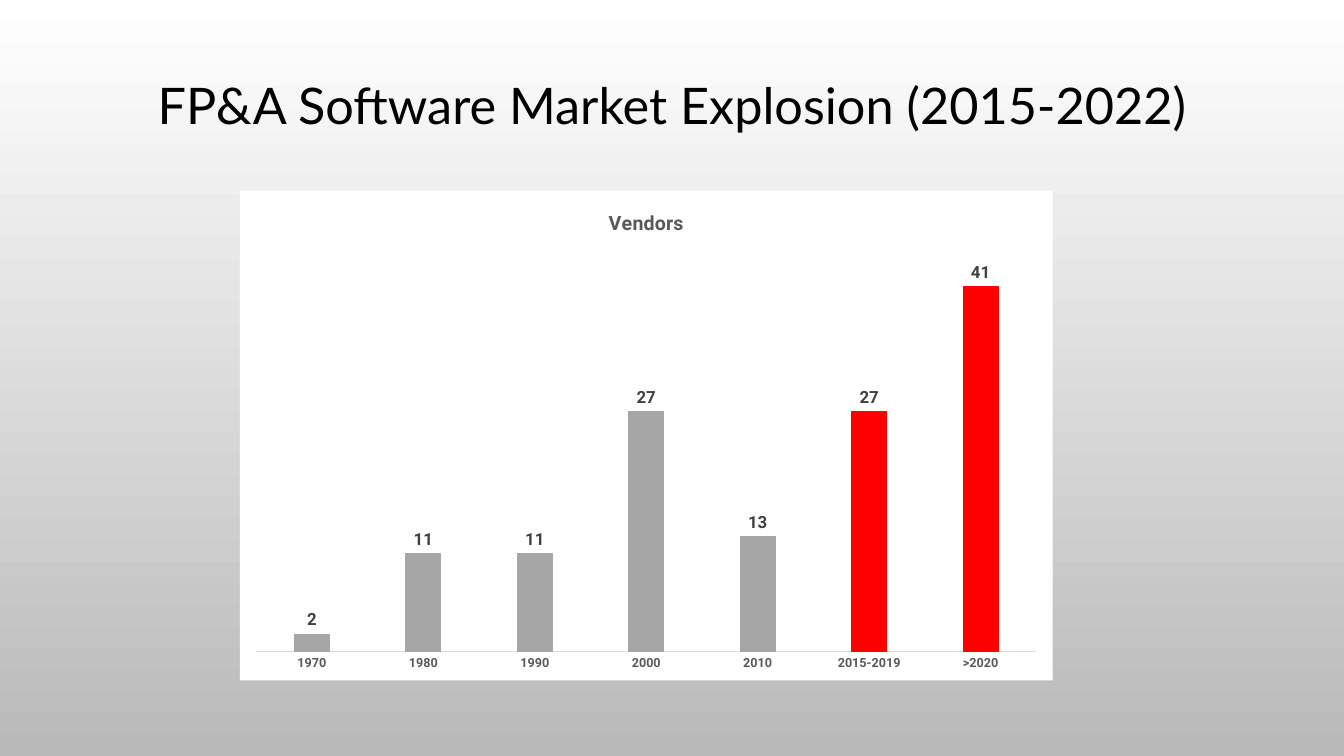
from lxml import etree
from pptx import Presentation
from pptx.chart.data import CategoryChartData
from pptx.dml.color import RGBColor
from pptx.enum.chart import XL_CHART_TYPE, XL_LABEL_POSITION, XL_TICK_MARK
from pptx.enum.text import MSO_ANCHOR, PP_ALIGN
from pptx.oxml import parse_xml
from pptx.util import Inches, Pt

COLUMNS = XL_CHART_TYPE.COLUMN_CLUSTERED
OUTSIDE = XL_LABEL_POSITION.OUTSIDE_END
NO_TICK = XL_TICK_MARK.NONE
MIDDLE = MSO_ANCHOR.MIDDLE
CENTER = PP_ALIGN.CENTER
WHITE, GRAY, RED = "FFFFFF", "A6A6A6", "FF0000"


def rgb(value):
    return RGBColor.from_string(value)


def set_font(font, name, size, color, bold):
    font.name = name
    font.size = Pt(size)
    font.color.rgb = rgb(color)
    font.bold = bold


prs = Presentation()
prs.slide_width, prs.slide_height = Inches(13.33), Inches(7.5)
s = prs.slides.add_slide(prs.slide_layouts[5])

# Background: white at the top to gray at the bottom
bg = s.background.fill
bg.gradient()
bg.gradient_angle = 270
for stop, position, color in zip(bg.gradient_stops, (0, 1), (WHITE, "B9B9B9")):
    stop.position = position
    stop.color.rgb = rgb(color)

# Title
title = s.shapes.title
title.left, title.top = Inches(1), Inches(0.2)
title.width, title.height = Inches(11.33), Inches(1.75)
tf = title.text_frame
tf.text = "FP&A Software Market Explosion (2015-2022)"
tf.vertical_anchor = MIDDLE
p = tf.paragraphs[0]
p.alignment = CENTER
p.line_spacing = 0.9
set_font(p.runs[0].font, "Lato", 36, "000000", False)

# Vendor chart
data = CategoryChartData()
data.categories = ["1970", "1980", "1990", "2000", "2010", "2015-2019", ">2020"]
data.add_series("Vendors", (2, 11, 11, 27, 13, 27, 41))
chart = s.shapes.add_chart(COLUMNS, Inches(2.38), Inches(1.89),
                           Inches(8.06), Inches(4.86), data).chart
set_font(chart.font, "Roboto", 10, "000000", True)
chart.has_legend = False
chart.has_title = True
tf = chart.chart_title.text_frame
tf.text = "Vendors"
set_font(tf.paragraphs[0].runs[0].font, "Roboto", 14, "595959", True)
chart.chart_title.include_in_layout = False

# White chart area without an outline
chart_part = chart.element.find("{*}chart") if hasattr(chart, "element") else chart._chartSpace.find("{*}chart")
chart_ns = etree.QName(chart_part).namespace
chart_part.addnext(parse_xml(
    f'<c:spPr xmlns:c="{chart_ns}" '
    'xmlns:a="http://schemas.openxmlformats.org/drawingml/2006/main">'
    f'<a:solidFill><a:srgbClr val="{WHITE}"/></a:solidFill>'
    '<a:ln><a:noFill/></a:ln></c:spPr>'))

# Axes
axis = chart.category_axis
axis.major_tick_mark = NO_TICK
axis.minor_tick_mark = NO_TICK
axis.format.line.color.rgb = rgb("D9D9D9")
axis.format.line.width = Pt(0.75)
set_font(axis.tick_labels.font, "Roboto", 9, "595959", True)
values = chart.value_axis
values.minimum_scale, values.maximum_scale = 0, 45
values.has_major_gridlines = False
values.visible = False

# Columns, with the latest two periods in red
plot = chart.plots[0]
plot.vary_by_categories = False
plot.gap_width, plot.overlap = 219, -27
series = plot.series[0]
series.invert_if_negative = False
series_format = series.format
red_formats = [series.points[i].format for i in (5, 6)]
for fmt, color in [(series_format, GRAY)] + [(f, RED) for f in red_formats]:
    fmt.fill.solid()
    fmt.fill.fore_color.rgb = rgb(color)
    fmt.line.color.rgb = rgb(color)
    fmt.line.width = Pt(0.75)

# Value labels
labels = series.data_labels
labels.show_value = True
labels.position = OUTSIDE
set_font(labels.font, "Roboto", 12, "404040", True)

prs.save("out.pptx")
